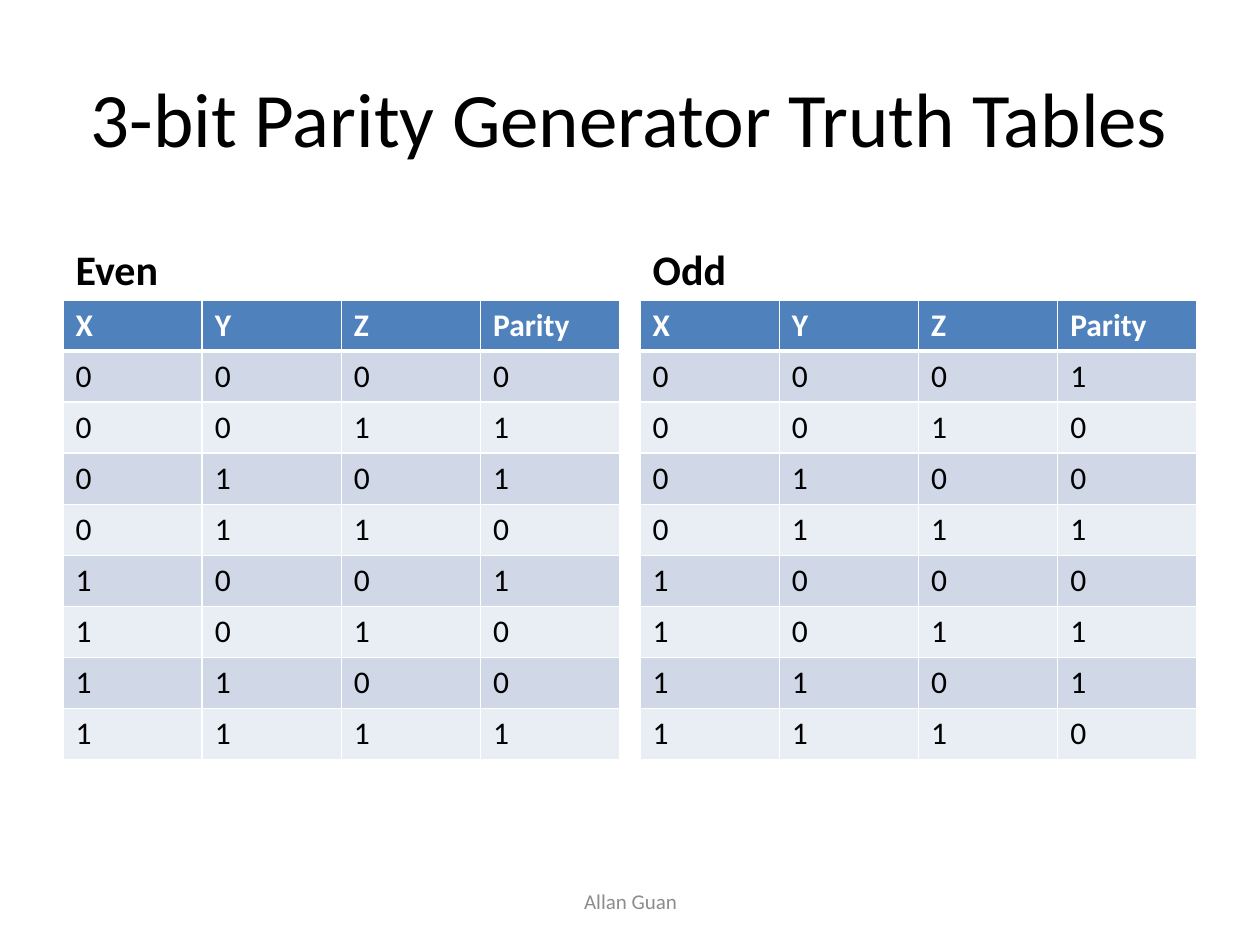
from itertools import product

from lxml.etree import SubElement
from pptx import Presentation
from pptx.dml.color import RGBColor
from pptx.enum.text import MSO_ANCHOR as Anchor, PP_ALIGN as Align
from pptx.oxml.ns import qn
from pptx.util import Inches, Pt

FONT = "Calibri"
BLACK = RGBColor(0x00, 0x00, 0x00)
WHITE = RGBColor(0xFF, 0xFF, 0xFF)
GRAY = RGBColor(0x8C, 0x8C, 0x8C)
HEADER_BLUE = RGBColor(0x4F, 0x81, 0xBD)
BANDS = RGBColor(0xD0, 0xD8, 0xE8), RGBColor(0xE9, 0xED, 0xF4)

COLUMN_LEFTS = 0.5, 5.08
COLUMN_WIDTH = 4.42
TABLE_TOP, TABLE_HEIGHT = 2.38, 3.65
HEADERS = "X", "Y", "Z", "Parity"


def place(shape, left, top, width, height):
    shape.left, shape.top = Inches(left), Inches(top)
    shape.width, shape.height = Inches(width), Inches(height)


def style_font(para, size, color, bold=False):
    font = para.font
    font.name, font.size, font.bold = FONT, Pt(size), bold
    font.color.rgb = color


def write_text(shape, text, size, color, anchor, align=Align.LEFT, bold=False):
    shape.text_frame.text = text
    shape.text_frame.vertical_anchor = anchor
    para = shape.text_frame.paragraphs[0]
    para.alignment = align
    style_font(para, size, color, bold)


def add_border(cell, side, points):
    """Draw a white line on one side (L, R, T or B); call before filling the cell."""
    properties = cell._tc.get_or_add_tcPr()
    line = SubElement(properties, qn(f"a:ln{side}"), w=str(Pt(points)))
    fill = SubElement(line, qn("a:solidFill"))
    SubElement(fill, qn("a:srgbClr"), val=str(WHITE))


def format_cell(cell, text, row):
    is_header = row == 0
    cell.text = text
    style_font(cell.text_frame.paragraphs[0], 18,
               WHITE if is_header else BLACK, is_header)
    add_border(cell, "L", 1)
    add_border(cell, "R", 1)
    add_border(cell, "T", 3 if row == 1 else 1)
    add_border(cell, "B", 3 if is_header else 1)
    cell.fill.solid()
    cell.fill.fore_color.rgb = HEADER_BLUE if is_header else BANDS[(row - 1) % 2]


def truth_rows(odd):
    """Return the header and every input triple with its parity bit."""
    return [HEADERS] + [(*bits, (sum(bits) + odd) % 2)
                        for bits in product((0, 1), repeat=3)]


def add_truth_table(slide, left, odd):
    rows = truth_rows(odd)
    table = slide.shapes.add_table(
        len(rows), len(HEADERS), Inches(left), Inches(TABLE_TOP),
        Inches(COLUMN_WIDTH), Inches(TABLE_HEIGHT)).table
    for row, values in enumerate(rows):
        for column, value in enumerate(values):
            format_cell(table.cell(row, column), str(value), row)


def add_footer(slide, text):
    box = slide.shapes.add_textbox(Inches(3.42), Inches(6.95), Inches(3.17), Inches(0.4))
    box.text_frame.word_wrap = True
    write_text(box, text, 12, GRAY, Anchor.MIDDLE, Align.CENTER)


def main():
    deck = Presentation()
    deck.slide_width, deck.slide_height = Inches(10), Inches(7.5)
    slide = deck.slides.add_slide(deck.slide_layouts.get_by_name("Comparison"))

    title, left_heading, left_content, right_heading, right_content = slide.placeholders
    for empty in (left_content, right_content):
        empty.element.getparent().remove(empty.element)

    place(title, 0.5, 0.3, 9, 1.25)
    write_text(title, "3-bit Parity Generator Truth Tables", 44, BLACK,
               Anchor.MIDDLE, Align.CENTER)

    headings = (left_heading, "Even"), (right_heading, "Odd")
    for odd, (left, (heading, text)) in enumerate(zip(COLUMN_LEFTS, headings)):
        place(heading, left, 1.68, COLUMN_WIDTH, 0.7)
        write_text(heading, text, 24, BLACK, Anchor.BOTTOM, bold=True)
        add_truth_table(slide, left, odd)

    add_footer(slide, "Allan Guan")
    deck.save("out.pptx")


if __name__ == "__main__":
    main()
